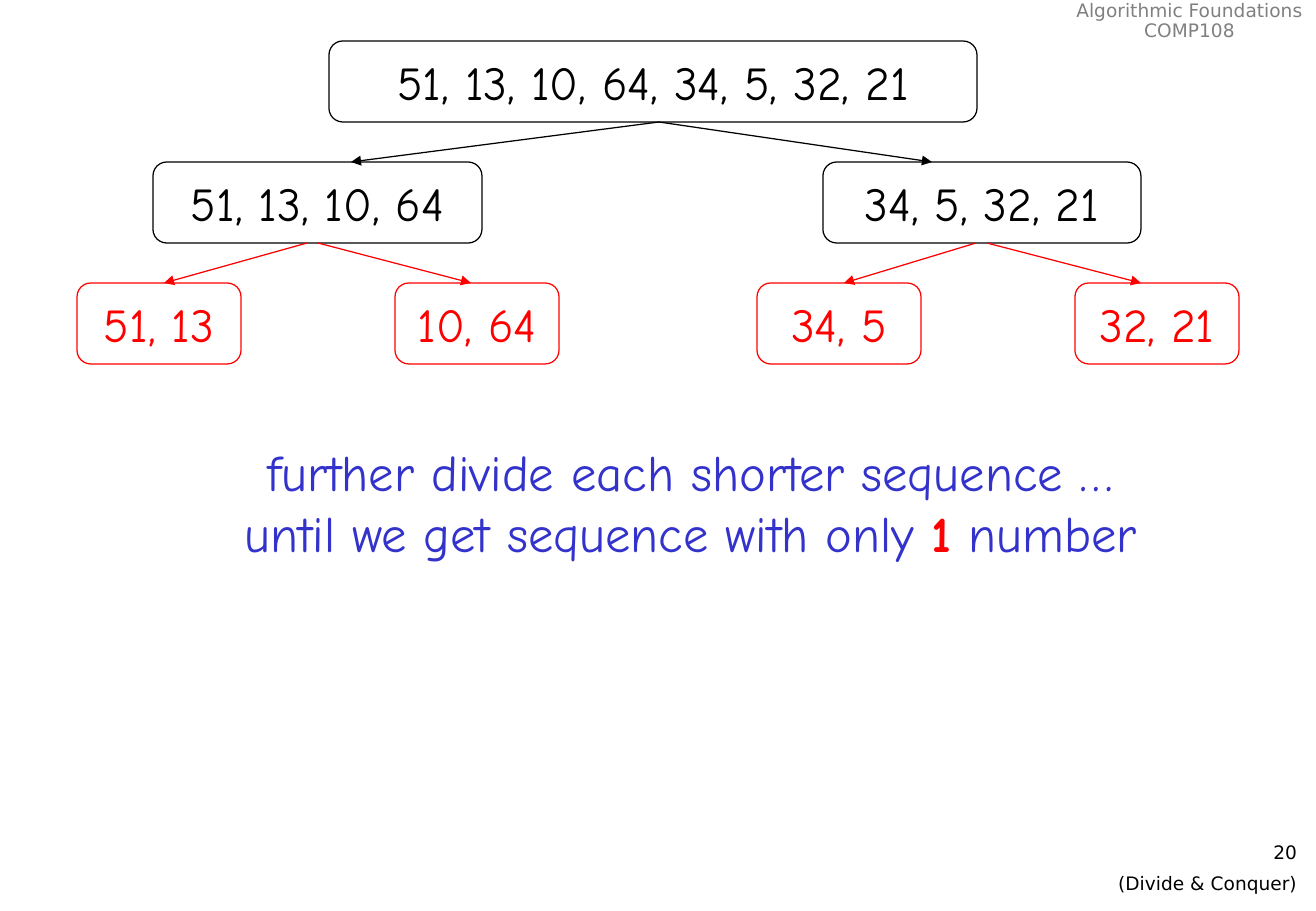
import pptx
import pptx.util
import pptx.dml.color
import pptx.enum.shapes
import pptx.enum.text
import pptx.oxml.ns
import lxml.etree

BLACK, RED, BLUE, GREY, WHITE = "000000", "FF0000", "3333CC", "808080", "FFFFFF"
HAND, SANS = "Comic Neue", "DejaVu Sans"
PX = 7526
SLIDE_SIZE = (1316, 911)
LEVEL_TOP, LEVEL_STEP, BOX_HEIGHT = 41, 121, 81
LEAF_LEFT, LEAF_WIDTH, LEAF_STEP, HALF_STEP = 77, 164, 318, 680

LEAVES = [["51, 13", "10, 64"], ["34, 5", "32, 21"]]
SEQUENCES = [
    (0, 329, 648, "51, 13, 10, 64, 34, 5, 32, 21", BLACK),
    (1, 153, 329, "51, 13, 10, 64", BLACK),
    (1, 823, 318, "34, 5, 32, 21", BLACK),
] + [
    (2, LEAF_LEFT + half * HALF_STEP + side * LEAF_STEP, LEAF_WIDTH, numbers, RED)
    for half, pair in enumerate(LEAVES)
    for side, numbers in enumerate(pair)
]
SPLITS = [
    (1, 307, 164, RED), (1, 318, 471, RED),
    (1, 976, 844, RED), (1, 987, 1141, RED),
    (0, 659, 351, BLACK), (0, 659, 932, BLACK),
]
CAPTIONS = [
    ((1063, -5, 253, 52), 11, SANS, False,
     {"alignment": pptx.enum.text.PP_ALIGN.CENTER, "line_spacing": 0.9},
     [[("Algorithmic Foundations", GREY)], [("COMP108", GREY)]]),
    ((1034, 835, 275, 61), 11, SANS, True,
     {"alignment": pptx.enum.text.PP_ALIGN.RIGHT, "space_after": pptx.util.Pt(5)},
     [[("20", BLACK)], [("(Divide & Conquer)", BLACK)]]),
    ((109, 435, 1163, 135), 30, HAND, True,
     {"alignment": pptx.enum.text.PP_ALIGN.CENTER},
     [[("further divide each shorter sequence …", BLUE)],
      [("until we get sequence with only ", BLUE), ("1", RED), (" number", BLUE)]]),
]


def color(value):
    return pptx.dml.color.RGBColor.from_string(value)


def emu(*lengths):
    return [length * PX for length in lengths]


def apply(target, formats):
    for name, value in formats.items():
        setattr(target, name, value)


def write(frame, lines, size, face, formats):
    for index, line in enumerate(lines):
        paragraph = frame.add_paragraph() if index else frame.paragraphs[0]
        apply(paragraph, formats)
        for words, ink in line:
            run = paragraph.add_run()
            run.text = words
            apply(run.font, {"size": pptx.util.Pt(size), "name": face, "bold": ink == RED and size == 30})
            run.font.color.rgb = color(ink)


def outline(line, ink):
    line.color.rgb = color(ink)
    line.width = pptx.util.Pt(0.75)


def level_top(level):
    return LEVEL_TOP + level * LEVEL_STEP


def add_sequence(slide, level, left, width, numbers, ink):
    box = slide.shapes.add_shape(
        pptx.enum.shapes.MSO_SHAPE.ROUNDED_RECTANGLE,
        *emu(left, level_top(level), width, BOX_HEIGHT))
    box.adjustments[0] = 0.17
    box.shadow.inherit = False
    box.fill.solid()
    box.fill.fore_color.rgb = color(WHITE)
    outline(box.line, ink)
    apply(box.text_frame, {"word_wrap": False, "vertical_anchor": pptx.enum.text.MSO_ANCHOR.MIDDLE})
    write(box.text_frame, [[(numbers, ink)]], 28, HAND, {"alignment": pptx.enum.text.PP_ALIGN.CENTER})


def add_split(slide, level, start, end, ink):
    arrow = slide.shapes.add_connector(
        pptx.enum.shapes.MSO_CONNECTOR.STRAIGHT,
        *emu(start, level_top(level) + BOX_HEIGHT, end, level_top(level + 1)))
    outline(arrow.line, ink)
    qn = pptx.oxml.ns.qn
    lxml.etree.SubElement(arrow.line._get_or_add_ln(), qn("a:tailEnd"), type="triangle")
    lxml.etree.SubElement(arrow._element.spPr, qn("a:effectLst"))


def add_caption(slide, place, size, face, wrap, formats, lines):
    frame = slide.shapes.add_textbox(*emu(*place)).text_frame
    frame.word_wrap = wrap
    write(frame, lines, size, face, formats)


def main():
    deck = pptx.Presentation()
    deck.slide_width, deck.slide_height = emu(*SLIDE_SIZE)
    slide = deck.slides.add_slide(deck.slide_layouts[6])
    for sequence in SEQUENCES:
        add_sequence(slide, *sequence)
    for split in SPLITS:
        add_split(slide, *split)
    for caption in CAPTIONS:
        add_caption(slide, *caption)
    deck.save("out.pptx")


if __name__ == "__main__":
    main()
